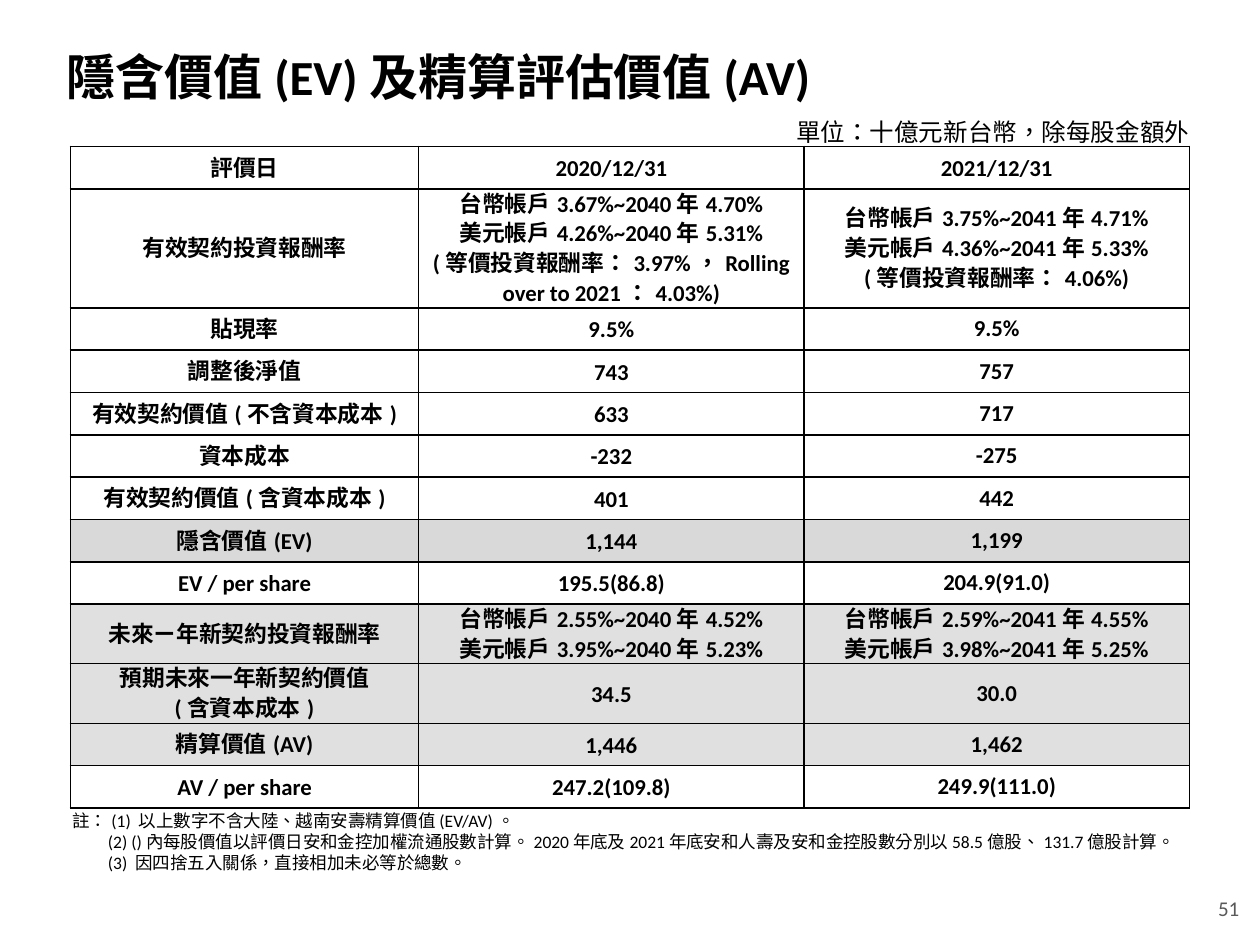
from lxml.etree import SubElement
from pptx import Presentation
from pptx.dml.color import RGBColor
from pptx.enum.lang import MSO_LANGUAGE_ID
from pptx.enum.text import MSO_ANCHOR, MSO_AUTO_SIZE, PP_ALIGN
from pptx.oxml.ns import qn
from pptx.util import Pt

TITLE = "隱含價值(EV)及精算評估價值(AV)"
UNIT = [("單位：十億元新台幣", "Noto Sans CJK SC"), ("，除每股金額外", "Calibri")]
PAGE_NUMBER = "51"

WHITE, GREY, LIGHT = None, "D9D9D9", "E0E0E0"
# fill, then the text of the three cells
ROWS = [
    (WHITE, "評價日", "2020/12/31", "2021/12/31"),
    (WHITE, "有效契約投資報酬率",
     "台幣帳戶3.67%~2040年4.70%\n美元帳戶4.26%~2040年5.31%\n"
     "(等價投資報酬率：3.97%，Rolling over to 2021：4.03%)",
     "台幣帳戶3.75%~2041年4.71%\n美元帳戶4.36%~2041年5.33%\n(等價投資報酬率：4.06%)"),
    (WHITE, "貼現率", "9.5%", "9.5%"),
    (WHITE, "調整後淨值", "743", "757"),
    (WHITE, "有效契約價值(不含資本成本)", "633", "717"),
    (WHITE, "資本成本", "-232", "-275"),
    (WHITE, "有效契約價值(含資本成本)", "401", "442"),
    (GREY, "隱含價值(EV)", "1,144", "1,199"),
    (WHITE, "EV / per share", "195.5(86.8)", "204.9(91.0)"),
    (LIGHT, "未來ㄧ年新契約投資報酬率",
     "台幣帳戶2.55%~2040年4.52%\n美元帳戶3.95%~2040年5.23%",
     "台幣帳戶2.59%~2041年4.55%\n美元帳戶3.98%~2041年5.25%"),
    (LIGHT, "預期未來一年新契約價值\n(含資本成本)", "34.5", "30.0"),
    (LIGHT, "精算價值(AV)", "1,446", "1,462"),
    (WHITE, "AV / per share", "247.2(109.8)", "249.9(111.0)"),
]
COLUMN_WIDTHS = [199, 220.2, 220.2]
ROW_HEIGHT, LINE_HEIGHT = 24.2, 17
TALL_ROWS = {1: 4, 9: 2, 10: 2}  # row: lines of text

# left indent, text
NOTES = [
    (2.5, "註：(1) 以上數字不含大陸、越南安壽精算價值(EV/AV)。"),
    (22.8, "(2) ()內每股價值以評價日安和金控加權流通股數計算。2020年底及2021年底安和人壽"
           "及安和金控股數分別以58.5億股、131.7億股計算。"),
    (22.8, "(3) 因四捨五入關係，直接相加未必等於總數。"),
]


def color(value):
    return RGBColor.from_string(value)


def add_span(para, text, size, bold=False, name="Calibri", ink="000000"):
    span = para.add_run()
    span.text = text
    font = span.font
    font.size, font.bold, font.name = Pt(size), bold, name
    font.color.rgb = color(ink)
    font.language_id = MSO_LANGUAGE_ID.TRADITIONAL_CHINESE


def place(shape, left, top, width, height):
    shape.left, shape.top = Pt(left), Pt(top)
    shape.width, shape.height = Pt(width), Pt(height)


def add_box(slide, left, top, width, height, wrap=True):
    """Add a text box without insets and return its text frame."""
    frame = slide.shapes.add_textbox(Pt(left), Pt(top), Pt(width), Pt(height)).text_frame
    frame.margin_left = frame.margin_right = frame.margin_top = frame.margin_bottom = 0
    frame.word_wrap = wrap
    return frame


def add_borders(cell):
    properties = cell._tc.get_or_add_tcPr()
    for side in ("lnL", "lnR", "lnT", "lnB"):
        line = SubElement(properties, qn(f"a:{side}"), w=str(Pt(1)))
        fill = SubElement(line, qn("a:solidFill"))
        SubElement(fill, qn("a:srgbClr"), val="000000")


def fill_cell(cell, text, fill, exact_lines):
    cell.vertical_anchor = MSO_ANCHOR.MIDDLE
    cell.margin_left = cell.margin_right = Pt(1.4)
    cell.margin_top = cell.margin_bottom = 0
    add_borders(cell)
    if fill:
        cell.fill.solid()
        cell.fill.fore_color.rgb = color(fill)
    else:
        cell.fill.background()
    frame = cell.text_frame
    for index, line in enumerate(text.split("\n")):
        para = frame.add_paragraph() if index else frame.paragraphs[0]
        para.alignment = PP_ALIGN.CENTER
        if exact_lines:
            para.line_spacing = Pt(LINE_HEIGHT)
        add_span(para, line, 13, bold=True)


def add_value_table(slide):
    heights = [TALL_ROWS[row] * LINE_HEIGHT if row in TALL_ROWS else ROW_HEIGHT
               for row in range(len(ROWS))]
    frame = slide.shapes.add_table(len(ROWS), len(COLUMN_WIDTHS), Pt(40.2), Pt(83.7),
                                   Pt(sum(COLUMN_WIDTHS)), Pt(sum(heights)))
    table = frame.table
    table.first_row = table.horz_banding = False
    for column, width in zip(table.columns, COLUMN_WIDTHS):
        column.width = Pt(width)
    for index, (fill, *texts) in enumerate(ROWS):
        table.rows[index].height = Pt(heights[index])
        for column, text in enumerate(texts):
            latest_figure = column == 2 and index > 1 and "\n" not in text
            fill_cell(table.cell(index, column), text, fill, not latest_figure)


def main():
    deck = Presentation()
    deck.slide_width, deck.slide_height = Pt(720), Pt(540)
    slide = deck.slides.add_slide(deck.slide_layouts[5])

    title = slide.shapes.title
    place(title, 31, 21.6, 657.4, 44)
    title.text_frame.auto_size = MSO_AUTO_SIZE.NONE
    title.text_frame.vertical_anchor = MSO_ANCHOR.MIDDLE
    para = title.text_frame.paragraphs[0]
    para.alignment = PP_ALIGN.LEFT
    add_span(para, TITLE, 28, bold=True)

    para = add_box(slide, 454.3, 67, 226, 17.3, wrap=False).paragraphs[0]
    para.alignment = PP_ALIGN.CENTER
    for text, name in UNIT:
        add_span(para, text, 14, name=name)

    add_value_table(slide)

    frame = add_box(slide, 38.9, 460.8, 649.4, 38.2)
    for index, (indent, text) in enumerate(NOTES):
        para = frame.add_paragraph() if index else frame.paragraphs[0]
        para._p.get_or_add_pPr().set("marL", str(Pt(indent)))
        if index == 0:
            para.line_spacing = Pt(14)
        add_span(para, text, 10)

    frame = add_box(slide, 689, 507.6, 31, 22.3)
    frame.margin_left = Pt(7.2)
    frame.vertical_anchor = MSO_ANCHOR.MIDDLE
    add_span(frame.paragraphs[0], PAGE_NUMBER, 12, ink="595959")

    deck.save("out.pptx")


if __name__ == "__main__":
    main()
